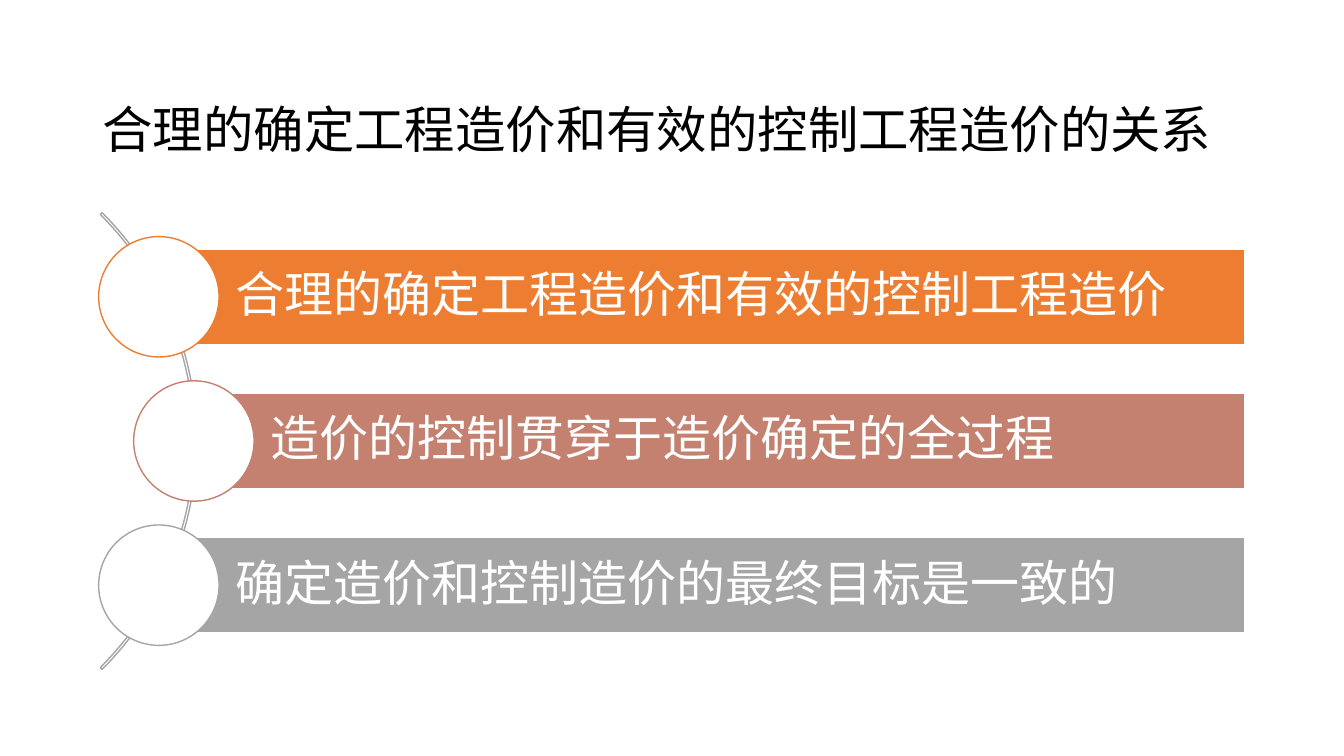
from lxml import etree
from pptx import Presentation
from pptx.dml.color import RGBColor
from pptx.enum.shapes import MSO_SHAPE
from pptx.enum.text import MSO_ANCHOR, PP_ALIGN
from pptx.oxml.ns import qn
from pptx.util import Pt

ARC, RECT, OVAL = MSO_SHAPE.BLOCK_ARC, MSO_SHAPE.RECTANGLE, MSO_SHAPE.OVAL
MIDDLE, LEFT = MSO_ANCHOR.MIDDLE, PP_ALIGN.LEFT
BLACK = RGBColor(0x00, 0x00, 0x00)
WHITE = RGBColor(0xFF, 0xFF, 0xFF)
ORANGE = RGBColor(0xED, 0x7D, 0x31)
ROSE = RGBColor(0xC4, 0x81, 0x70)
GRAY = RGBColor(0xA5, 0xA5, 0xA5)
CJK_FONT = "Noto Sans CJK JP"
TITLE_FONT = "Times New Roman"

MID_Y = 315
PITCH = 103
BAR_RIGHT = 889
BAR_HEIGHT = 68
CIRCLE = 86
ARC_SIZE = 461.5
ARC_LEFT = -321
POINTS = [
    ("合理的确定工程造价和有效的控制工程造价", ORANGE, 113.5),
    ("造价的控制贯穿于造价确定的全过程", ROSE, 138.5),
    ("确定造价和控制造价的最终目标是一致的", GRAY, 113.5),
]


class Deck:
    def __init__(self, prs):
        self.s = prs.slides.add_slide(prs.slide_layouts[5])

    def text(self, tf, text, size, color, font, spacing):
        tf.word_wrap = True
        tf.vertical_anchor = MIDDLE
        p = tf.paragraphs[0]
        p.text = text
        p.alignment = LEFT
        p.line_spacing = spacing
        p.font.size = Pt(size)
        p.font.color.rgb = color
        p.font.name = font
        props = p._p.get_or_add_pPr().find(qn("a:defRPr"))
        etree.SubElement(props, qn("a:ea")).set("typeface", CJK_FONT)

    def title(self, text, x, y, w, h):
        sp = self.s.shapes.title
        sp.left, sp.top, sp.width, sp.height = Pt(x), Pt(y), Pt(w), Pt(h)
        self.text(sp.text_frame, text, 36, BLACK, TITLE_FONT, 1.5)

    def shape(self, kind, x, y, w, h, line, fill=None):
        sp = self.s.shapes.add_shape(kind, Pt(x), Pt(y), Pt(w), Pt(h))
        sp.shadow.inherit = False
        if fill is None:
            sp.fill.background()
        else:
            sp.fill.solid()
            sp.fill.fore_color.rgb = fill
        sp.line.color.rgb = line
        sp.line.width = Pt(1)
        return sp

    def arc(self, x, y, size, color):
        sp = self.shape(ARC, x, y, size, size, color)
        for i, value in enumerate((189, 27, 0.004)):
            sp.adjustments[i] = value

    def bar(self, text, x, mid_y, color):
        sp = self.shape(RECT, x, mid_y - BAR_HEIGHT / 2, BAR_RIGHT - x, BAR_HEIGHT, WHITE, color)
        tf = sp.text_frame
        tf.margin_left = Pt(54.5)
        tf.margin_top = tf.margin_right = tf.margin_bottom = Pt(7)
        self.text(tf, text, 35, WHITE, CJK_FONT, 0.9)

    def circle(self, mid_x, mid_y, color):
        self.shape(OVAL, mid_x - CIRCLE / 2, mid_y - CIRCLE / 2, CIRCLE, CIRCLE, color, WHITE)


def main():
    prs = Presentation()
    prs.slide_width, prs.slide_height = Pt(960), Pt(540)
    deck = Deck(prs)
    deck.title("合理的确定工程造价和有效的控制工程造价的关系", 66, 28.75, 828, 104.4)
    deck.arc(ARC_LEFT, MID_Y - ARC_SIZE / 2, ARC_SIZE, GRAY)
    for i, (text, color, x) in enumerate(POINTS):
        mid_y = MID_Y + (i - 1) * PITCH
        deck.bar(text, x, mid_y, color)
        deck.circle(x, mid_y, color)
    prs.save("out.pptx")


if __name__ == "__main__":
    main()
